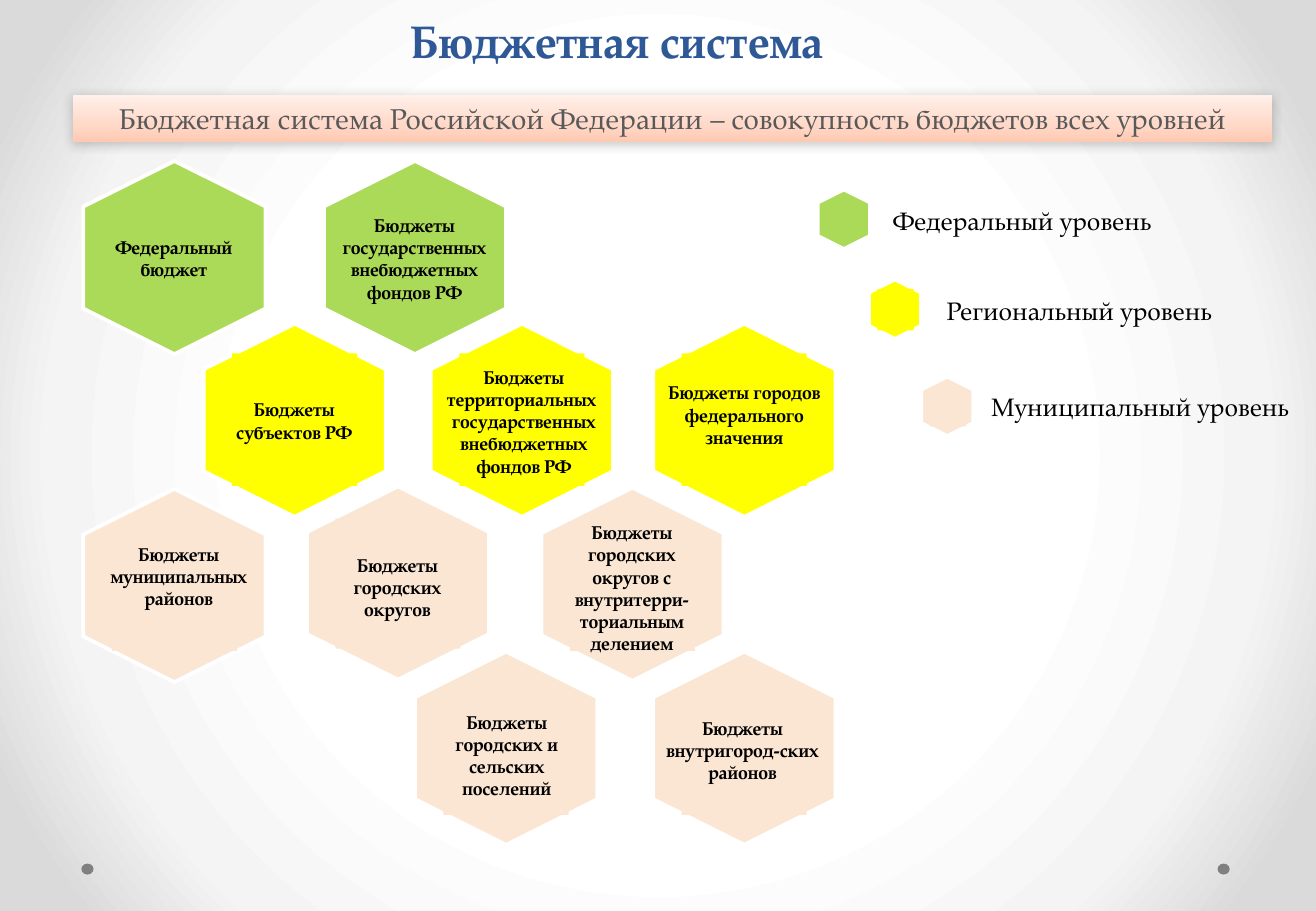
from dataclasses import dataclass

from pptx import Presentation
from pptx.dml.color import RGBColor
from pptx.enum.shapes import MSO_SHAPE
from pptx.enum.text import MSO_ANCHOR, MSO_AUTO_SIZE, PP_ALIGN
from pptx.oxml import parse_xml
from pptx.oxml.ns import nsdecls, qn
from pptx.util import Inches, Pt

HEXAGON, RECTANGLE, OVAL = MSO_SHAPE.HEXAGON, MSO_SHAPE.RECTANGLE, MSO_SHAPE.OVAL
CENTER, LEFT = PP_ALIGN.CENTER, PP_ALIGN.LEFT
TOP, MIDDLE = MSO_ANCHOR.TOP, MSO_ANCHOR.MIDDLE
GROW = MSO_AUTO_SIZE.SHAPE_TO_FIT_TEXT

FONT = "TeX Gyre Pagella"
BLUE = RGBColor(0x2F, 0x58, 0x97)
DARK_GRAY = RGBColor(0x59, 0x59, 0x59)
GRAY = RGBColor(0x80, 0x80, 0x80)
BLACK = RGBColor(0, 0, 0)
WHITE = RGBColor(0xFF, 0xFF, 0xFF)
FEDERAL = RGBColor(0xAB, 0xD9, 0x58)
REGIONAL = RGBColor(0xFF, 0xFF, 0x00)
MUNICIPAL = RGBColor(0xFA, 0xE6, 0xD3)

Box = tuple[float, float, float, float]


@dataclass(frozen=True)
class HexagonSize:
    width: float
    height: float
    patch_left: float
    patch_width: float


@dataclass(frozen=True)
class Cell:
    """A coloured hexagon, its caption and the patch (offset, height) over it."""
    left: float
    top: float
    color: RGBColor
    text: str
    text_box: Box
    patch: tuple[float, float] | None = None


LARGE = HexagonSize(1.59, 1.5, 0.28, 1.03)
SMALL = HexagonSize(0.49, 0.43, 0.1, 0.3)
REGIONAL_PATCH = (0.2, 1.09)
LOW_PATCH = (0.29, 1.01)

BUDGETS = [
    Cell(5.33, 2.71, REGIONAL, "Бюджеты городов федерального значения",
         (5.36, 3.09, 1.53, 0.85), REGIONAL_PATCH),
    Cell(3.5, 2.71, REGIONAL,
         "Бюджеты территориальных  государственных внебюджетных фондов РФ",
         (3.42, 2.96, 1.78, 1.03), REGIONAL_PATCH),
    Cell(1.63, 2.71, REGIONAL, "Бюджеты субъектов РФ",
         (1.67, 3.23, 1.5, 0.48), REGIONAL_PATCH),
    Cell(2.62, 1.37, FEDERAL, "Бюджеты государственных внебюджетных фондов РФ",
         (2.52, 1.71, 1.78, 0.85)),
    Cell(0.64, 1.37, FEDERAL, "Федеральный бюджет", (0.68, 1.89, 1.5, 0.48)),
    Cell(4.41, 4.06, MUNICIPAL,
         "Бюджеты городских округов с внутритерри-ториальным делением",
         (4.45, 4.24, 1.5, 1.22), (0.23, 1.07)),
    Cell(2.48, 4.05, MUNICIPAL, "Бюджеты городских округов",
         (2.52, 4.51, 1.5, 0.66), (0.22, 1.07)),
    Cell(0.64, 4.07, MUNICIPAL, "Бюджеты муниципальных районов",
         (0.6, 4.42, 1.74, 0.66), (0.28, 1.01)),
    Cell(3.37, 5.41, MUNICIPAL, "Бюджеты городских и сельских поселений",
         (3.42, 5.8, 1.5, 0.85), LOW_PATCH),
    Cell(5.33, 5.41, MUNICIPAL, "Бюджеты внутригород-ских районов",
         (5.36, 5.85, 1.5, 0.66), LOW_PATCH),
]
LEGEND = [
    Cell(6.7, 1.59, FEDERAL, "Федеральный уровень", (7.24, 1.64, 2.38, 0.36)),
    Cell(7.12, 2.33, REGIONAL, "Региональный уровень",
         (7.68, 2.38, 2.46, 0.36), (0.05, 0.34)),
    Cell(7.55, 3.13, MUNICIPAL, "Муниципальный уровень",
         (8.05, 3.17, 2.74, 0.36), (0.14, 0.24)),
]


def gradient(stops: list[tuple[int, str]], direction: str):
    stop_xml = "".join(f'<a:gs pos="{position * 1000}"><a:srgbClr val="{color}"/></a:gs>'
                       for position, color in stops)
    return parse_xml(f'<a:gradFill {nsdecls("a")} rotWithShape="1">'
                     f"<a:gsLst>{stop_xml}</a:gsLst>{direction}</a:gradFill>")


def replace_solid_fill(properties, fill) -> None:
    properties.replace(properties.find(qn("a:solidFill")), fill)


def add_filled(slide, kind, box: Box, color: RGBColor):
    shape = slide.shapes.add_shape(kind, *map(Inches, box))
    shape.shadow.inherit = False
    shape.fill.solid()
    shape.fill.fore_color.rgb = color
    shape.line.fill.background()
    return shape


def write_text(shape, text: str, size: float, color: RGBColor, bold: bool = False,
               align=CENTER, anchor=TOP, wrap: bool = True) -> None:
    frame = shape.text_frame
    frame.text = text
    frame.word_wrap = wrap
    frame.auto_size = GROW
    frame.vertical_anchor = anchor
    frame.margin_left = frame.margin_right = Inches(0.11)
    frame.margin_top = frame.margin_bottom = Inches(0.05)
    paragraph = frame.paragraphs[0]
    paragraph.alignment = align
    font = paragraph.font
    font.name, font.size, font.bold = FONT, Pt(size), bold
    font.color.rgb = color


def add_hexagon(slide, cell: Cell, size: HexagonSize) -> None:
    hexagon = add_filled(slide, HEXAGON, (cell.left, cell.top, size.width, size.height),
                         cell.color)
    hexagon.rotation = 90
    hexagon.adjustments[0] = 0.25
    hexagon.line.color.rgb = WHITE
    hexagon.line.width = Pt(2.25)
    if cell.patch:
        offset, height = cell.patch
        add_filled(slide, RECTANGLE, (cell.left + size.patch_left, cell.top + offset,
                                      size.patch_width, height), cell.color)


def add_background(slide) -> None:
    slide.background.fill.solid()
    direction = ('<a:path path="circle">'
                 '<a:fillToRect l="50000" t="50000" r="50000" b="50000"/></a:path>')
    replace_solid_fill(slide.element.find(".//" + qn("p:bgPr")),
                       gradient([(50, "FFFFFF"), (76, "F4F4F4"), (92, "DADADA")], direction))
    for left in (10.02, 0.67):
        add_filled(slide, OVAL, (left, 7.11, 0.1, 0.09), GRAY)


def add_definition(slide) -> None:
    bar = add_filled(slide, RECTANGLE, (0.6, 0.78, 9.87, 0.39), WHITE)
    properties = bar.element.spPr
    replace_solid_fill(properties, gradient([(0, "FFC9B1"), (35, "FFD8C8"), (100, "FFF0EA")],
                                            '<a:lin ang="16200000" scaled="0"/>'))
    properties.find(qn("a:effectLst")).append(parse_xml(
        f'<a:outerShdw {nsdecls("a")} blurRad="{Pt(6)}" dist="{Pt(1)}" dir="8100000" '
        'rotWithShape="0"><a:srgbClr val="000000"><a:alpha val="20000"/></a:srgbClr>'
        "</a:outerShdw>"))
    write_text(bar, "Бюджетная система Российской Федерации – совокупность бюджетов всех уровней",
               17, DARK_GRAY, anchor=MIDDLE)


def main() -> None:
    presentation = Presentation()
    presentation.slide_width, presentation.slide_height = Inches(10.83), Inches(7.5)
    slide = presentation.slides.add_slide(presentation.slide_layouts[5])
    add_background(slide)

    # Title and definition
    title = slide.shapes.title
    title.left, title.top, title.width, title.height = map(Inches, (3.27, 0.06, 4.04, 0.56))
    write_text(title, "Бюджетная система", 27, BLUE, bold=True, align=LEFT, wrap=False)
    add_definition(slide)

    # Hexagons of the budgets and the legend
    for cells, size in ((BUDGETS, LARGE), (LEGEND, SMALL)):
        for cell in cells:
            add_hexagon(slide, cell, size)

    # Captions
    for cell in LEGEND:
        caption = slide.shapes.add_textbox(*map(Inches, cell.text_box))
        write_text(caption, cell.text, 15, BLACK, align=LEFT, wrap=False)
    for cell in BUDGETS:
        caption = slide.shapes.add_textbox(*map(Inches, cell.text_box))
        write_text(caption, cell.text, 11, BLACK, bold=True)

    presentation.save("out.pptx")


if __name__ == "__main__":
    main()
